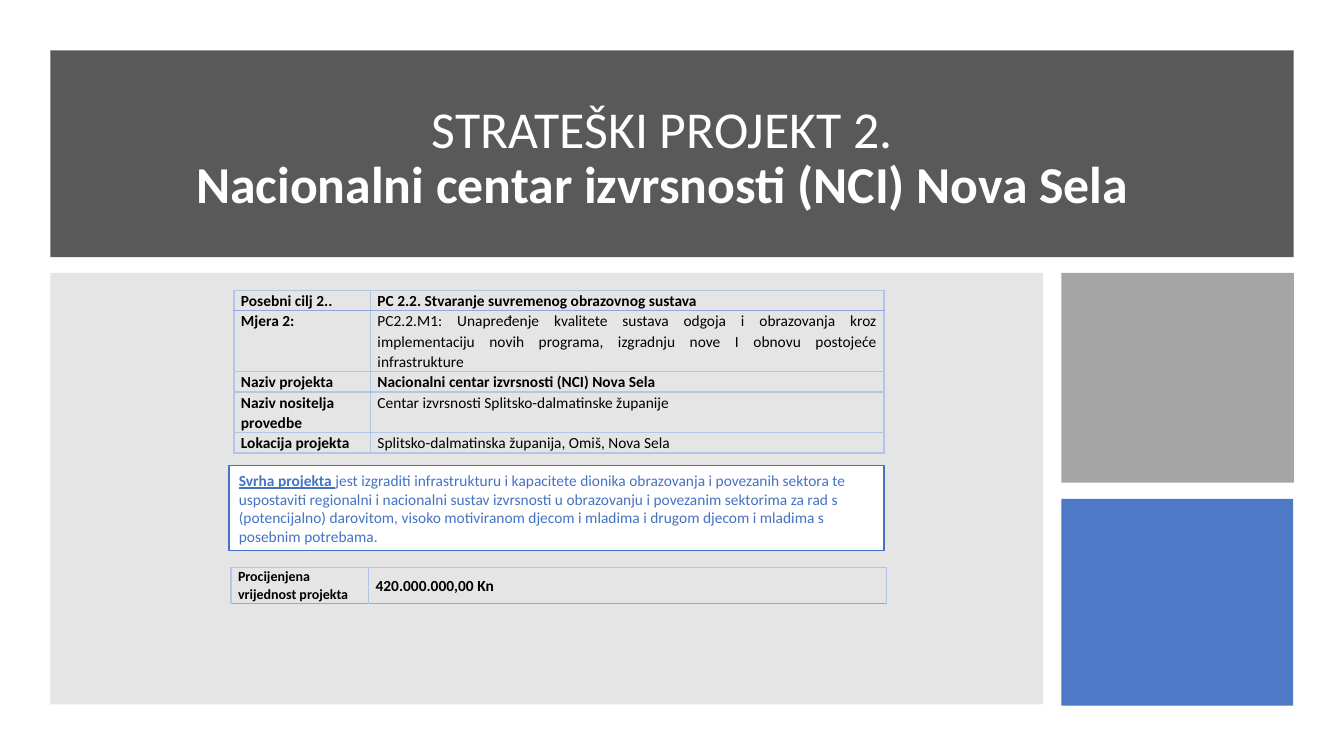
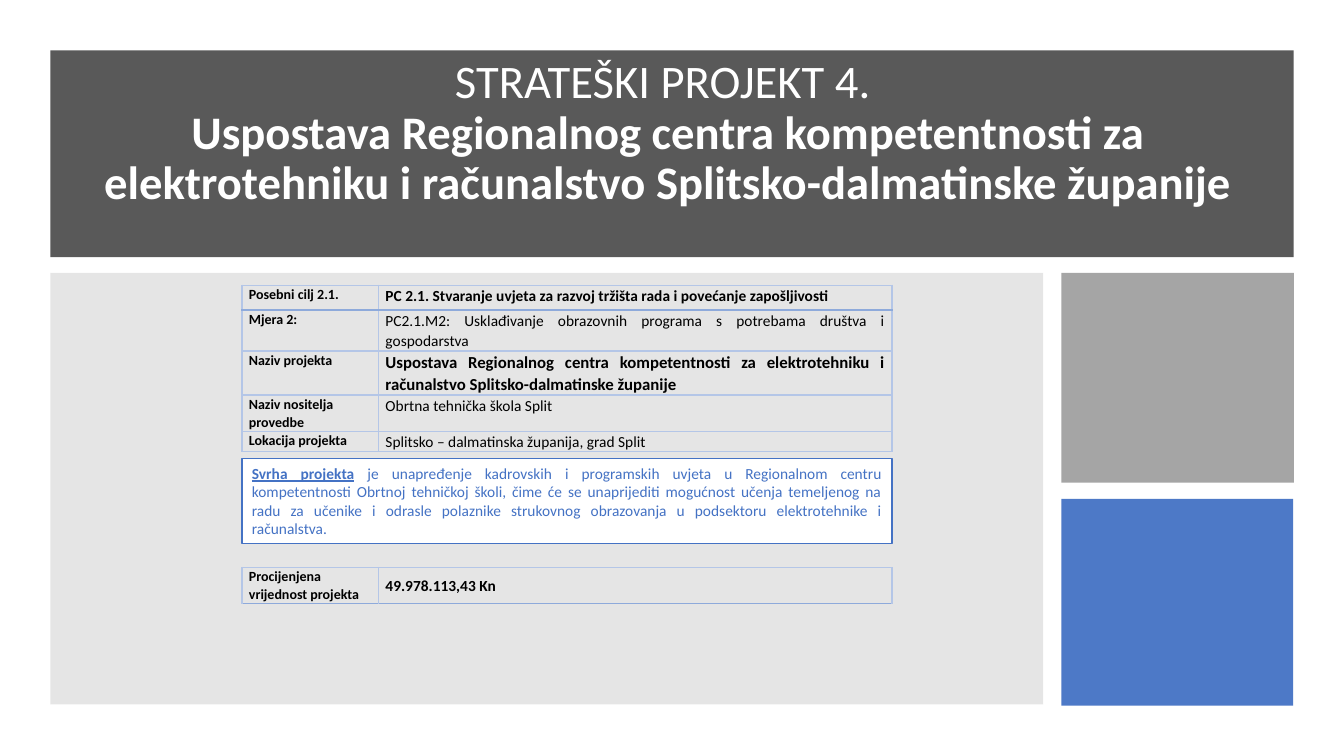
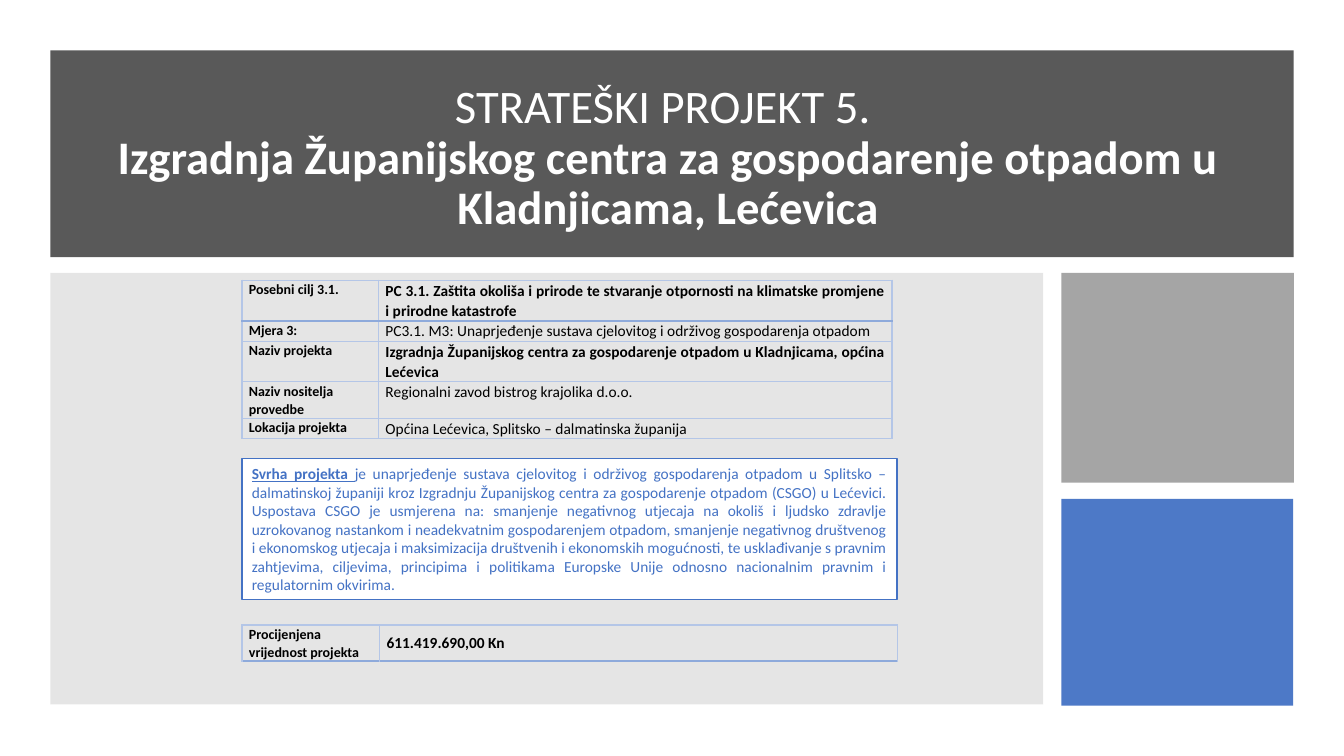
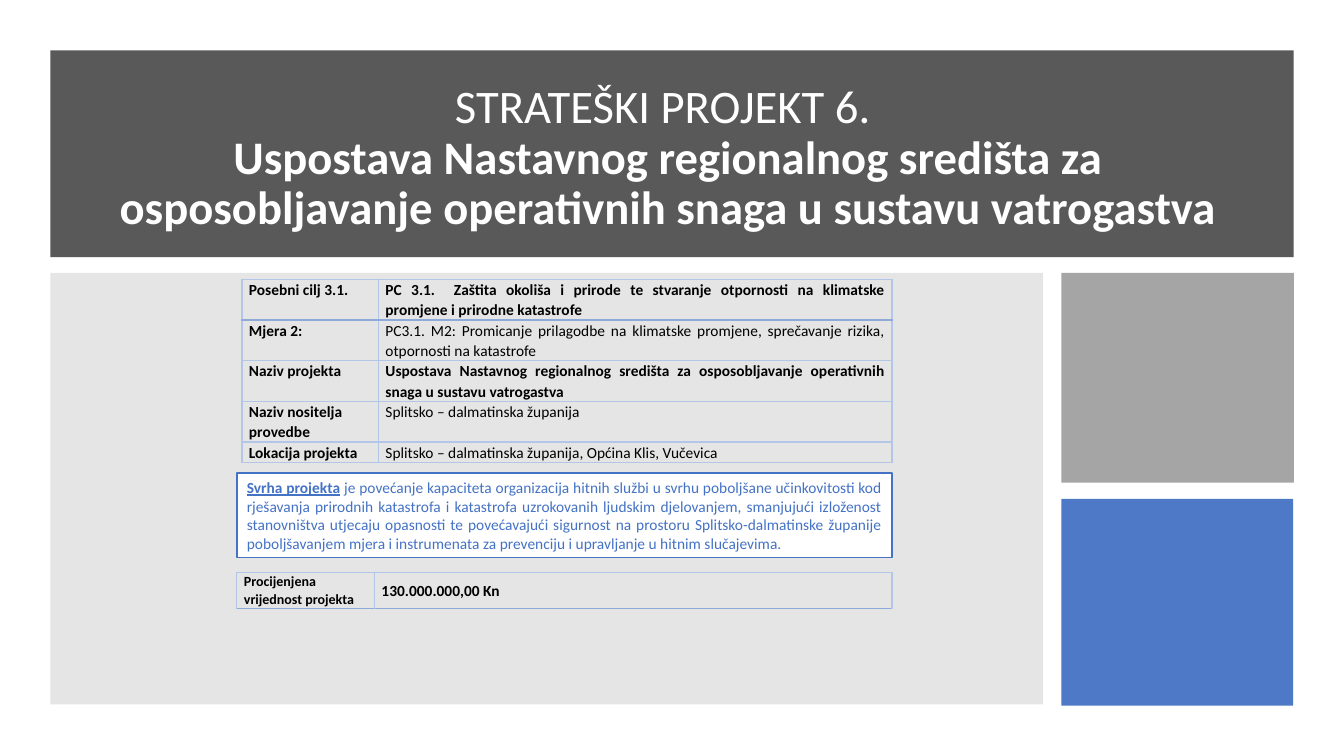
"""Build four slides that each present one strategic project of the county."""
from dataclasses import dataclass
from typing import NamedTuple

from lxml.etree import SubElement
from pptx import Presentation
from pptx.dml.color import RGBColor
from pptx.enum.shapes import MSO_SHAPE
from pptx.enum.text import MSO_ANCHOR, MSO_AUTO_SIZE, PP_ALIGN
from pptx.oxml.ns import qn
from pptx.util import Emu, Inches, Pt

FONT = "Calibri"
WHITE = RGBColor(0xFF, 0xFF, 0xFF)
BLACK = RGBColor(0x00, 0x00, 0x00)
BAND_GRAY = RGBColor(0x59, 0x59, 0x59)
PANEL_GRAY = RGBColor(0x80, 0x80, 0x80)
BLOCK_GRAY = RGBColor(0xA5, 0xA5, 0xA5)
BLUE = RGBColor(0x44, 0x72, 0xC4)
BORDER = RGBColor(0xB4, 0xC6, 0xE7)
BORDER_STRONG = RGBColor(0x8E, 0xAA, 0xDB)

SLIDE_WIDTH = Inches(13.333)
SLIDE_HEIGHT = Inches(7.5)
GRID_COLUMNS, GRID_ROWS = 32, 18
LABEL_SHARE = 0.21
VALUE_HEIGHT = 0.84
LABELS = ("Naziv projekta", "Naziv nositelja provedbe", "Lokacija projekta")
BOLD_ROWS = (0, 2)


class Area(NamedTuple):
    """Left, top, width and height in grid columns and rows."""

    left: float
    top: float
    width: float
    height: float

    def lengths(self) -> tuple[Emu, Emu, Emu, Emu]:
        """Convert the grid units to slide lengths."""
        column, row = SLIDE_WIDTH / GRID_COLUMNS, SLIDE_HEIGHT / GRID_ROWS
        return (Emu(round(self.left * column)), Emu(round(self.top * row)),
                Emu(round(self.width * column)), Emu(round(self.height * row)))


class Block(NamedTuple):
    """A plain rectangle of the shared background."""

    area: Area
    color: RGBColor
    opacity: int = 100


class Style(NamedTuple):
    """The look of one run of text."""

    size: float
    color: RGBColor = BLACK
    bold: bool = False
    underline: bool = False


@dataclass(frozen=True)
class Project:
    """The contents and the layout of one project slide."""

    number: int
    name: str
    goal: tuple[str, str]
    measure: tuple[str, str]
    details: tuple[str, str, str]
    purpose: tuple[str, str]
    cost: str
    facts_area: Area
    purpose_area: Area
    cost_area: Area
    title_size: float = 33.3
    title_lift: float = 0
    label_size: float = 11
    name_size: float = 11
    goal_height: float = 0.15
    purpose_align: PP_ALIGN = PP_ALIGN.JUSTIFY


TITLE_AREA = Area(1.92, 1.92, 27.98, 3.74)
BLOCKS = (
    Block(Area(1.2, 1.2, 29.6, 4.92), BAND_GRAY),
    Block(Area(1.2, 6.5, 23.64, 10.27), PANEL_GRAY, 20),
    Block(Area(25.27, 6.5, 5.54, 4.99), BLOCK_GRAY),
    Block(Area(25.27, 11.88, 5.52, 4.92), BLUE, 95),
)

PROJECTS = (
    Project(
        number=2,
        name="Nacionalni centar izvrsnosti (NCI) Nova Sela ",
        goal=("Posebni cilj 2..", "PC 2.2. Stvaranje suvremenog obrazovnog sustava"),
        measure=("Mjera 2:", "PC2.2.M1: Unapređenje kvalitete sustava odgoja i obrazovanja kroz "
                 "implementaciju novih programa, izgradnju nove I obnovu postojeće infrastrukture"),
        details=("Nacionalni centar izvrsnosti (NCI) Nova Sela ",
                 "Centar izvrsnosti Splitsko-dalmatinske županije",
                 "Splitsko-dalmatinska županija, Omiš, Nova Sela"),
        purpose=("Svrha projekta ",
                 "jest izgraditi infrastrukturu i kapacitete dionika obrazovanja i povezanih "
                 "sektora te uspostaviti regionalni i nacionalni sustav izvrsnosti u obrazovanju i "
                 "povezanim sektorima za rad s (potencijalno) darovitom, visoko motiviranom djecom "
                 "i mladima i drugom djecom i mladima s posebnim potrebama."),
        cost="420.000.000,00 Kn",
        facts_area=Area(5.57, 6.91, 15.48, 3.67),
        purpose_area=Area(5.45, 11.09, 15.6, 2.02),
        cost_area=Area(5.5, 13.51, 15.6, VALUE_HEIGHT),
        title_size=37,
        purpose_align=PP_ALIGN.LEFT,
    ),
    Project(
        number=4,
        name="Uspostava Regionalnog centra kompetentnosti za elektrotehniku i računalstvo "
             "Splitsko-dalmatinske županije",
        goal=("Posebni cilj 2.1.",
              "PC 2.1. Stvaranje uvjeta za razvoj tržišta rada i povećanje zapošljivosti"),
        measure=("Mjera 2:", "PC2.1.M2: Usklađivanje obrazovnih programa s potrebama društva i "
                 "gospodarstva"),
        details=("Uspostava Regionalnog centra kompetentnosti za elektrotehniku i računalstvo "
                 "Splitsko-dalmatinske županije",
                 "Obrtna tehnička škola Split",
                 "Splitsko – dalmatinska županija, grad Split "),
        purpose=("Svrha projekta",
                 " je unapređenje kadrovskih i programskih uvjeta u Regionalnom centru "
                 "kompetentnosti Obrtnoj tehničkoj školi, čime će se unaprijediti mogućnost učenja "
                 "temeljenog na radu za učenike i odrasle polaznike strukovnog obrazovanja u "
                 "podsektoru elektrotehnike i računalstva."),
        cost="49.978.113,43 Kn",
        facts_area=Area(5.76, 6.79, 15.48, 3.82),
        purpose_area=Area(5.76, 10.92, 15.48, 2.02),
        cost_area=Area(5.76, 13.51, 15.48, VALUE_HEIGHT),
        title_lift=0.5,
        label_size=10,
        name_size=12,
        goal_height=0.25,
    ),
    Project(
        number=5,
        name="Izgradnja Županijskog centra za gospodarenje otpadom u Kladnjicama, Lećevica",
        goal=("Posebni cilj 3.1.", "PC 3.1. Zaštita okoliša i prirode te stvaranje otpornosti na "
              "klimatske promjene i prirodne katastrofe"),
        measure=("Mjera 3:",
                 "PC3.1. M3: Unaprjeđenje sustava cjelovitog i održivog gospodarenja otpadom"),
        details=("Izgradnja Županijskog centra za gospodarenje otpadom u Kladnjicama, općina "
                 "Lećevica",
                 "Regionalni zavod bistrog krajolika d.o.o.",
                 "Općina Lećevica, Splitsko – dalmatinska županija"),
        purpose=("Svrha projekta ",
                 "je unaprjeđenje sustava cjelovitog i održivog gospodarenja otpadom u Splitsko – "
                 "dalmatinskoj županiji kroz Izgradnju Županijskog centra za gospodarenje otpadom "
                 "(CSGO) u Lećevici. Uspostava CSGO je usmjerena na: smanjenje negativnog utjecaja "
                 "na okoliš i ljudsko zdravlje uzrokovanog nastankom i neadekvatnim gospodarenjem "
                 "otpadom, smanjenje negativnog društvenog i ekonomskog utjecaja i maksimizacija "
                 "društvenih i ekonomskih mogućnosti, te usklađivanje s pravnim zahtjevima, "
                 "ciljevima, principima i politikama Europske Unije odnosno nacionalnim pravnim i "
                 "regulatornim okvirima."),
        cost="611.419.690,00 Kn",
        facts_area=Area(5.76, 6.67, 15.48, 3.58),
        purpose_area=Area(5.76, 10.92, 15.6, 3.36),
        cost_area=Area(5.76, 14.88, 15.6, VALUE_HEIGHT),
        label_size=10,
    ),
    Project(
        number=6,
        name="Uspostava Nastavnog regionalnog središta za osposobljavanje operativnih snaga u "
             "sustavu vatrogastva",
        goal=("Posebni cilj 3.1.", "PC 3.1.  Zaštita okoliša i prirode te stvaranje otpornosti na "
              "klimatske promjene i prirodne katastrofe"),
        measure=("Mjera 2:", "PC3.1. M2: Promicanje prilagodbe na klimatske promjene, sprečavanje "
                 "rizika, otpornosti na katastrofe"),
        details=("Uspostava Nastavnog regionalnog središta za osposobljavanje operativnih snaga u "
                 "sustavu vatrogastva",
                 "Splitsko – dalmatinska županija",
                 "Splitsko – dalmatinska županija, Općina Klis, Vučevica"),
        purpose=("Svrha projekta",
                 " je povećanje kapaciteta organizacija hitnih službi u svrhu poboljšane "
                 "učinkovitosti kod rješavanja prirodnih katastrofa i katastrofa uzrokovanih "
                 "ljudskim djelovanjem, smanjujući izloženost stanovništva utjecaju opasnosti te "
                 "povećavajući sigurnost na prostoru Splitsko-dalmatinske županije poboljšavanjem "
                 "mjera i instrumenata za prevenciju i upravljanje u hitnim slučajevima. "),
        cost="130.000.000,00 Kn",
        facts_area=Area(5.76, 6.65, 15.48, 4.13),
        purpose_area=Area(5.64, 11.26, 15.6, 2.02),
        cost_area=Area(5.64, 13.63, 15.6, VALUE_HEIGHT),
    ),
)


def add_span(para, text: str, style: Style) -> None:
    """Add one formatted run to a paragraph."""
    span = para.add_run()
    span.text = text
    span.font.name = FONT
    span.font.size = Pt(style.size)
    span.font.bold = style.bold
    span.font.underline = style.underline
    span.font.color.rgb = style.color


def add_block(slide, block: Block):
    """Draw a filled rectangle without outline or shadow."""
    box = slide.shapes.add_shape(MSO_SHAPE.RECTANGLE, *block.area.lengths())
    box.shadow.inherit = False
    box.line.fill.background()
    box.fill.solid()
    box.fill.fore_color.rgb = block.color
    if block.opacity < 100:
        color = box.fill._xPr.find(qn("a:solidFill"))[0]
        SubElement(color, qn("a:alpha"), val=str(block.opacity * 1000))
    return box


def fill_title(slide, project: Project) -> None:
    """Place the two-part title above the band."""
    title = slide.shapes.title
    slide.shapes._spTree.append(title._element)
    title.left, title.top, title.width, title.height = TITLE_AREA.lengths()
    frame = title.text_frame
    frame.word_wrap = True
    frame.auto_size = MSO_AUTO_SIZE.NONE
    frame.vertical_anchor = MSO_ANCHOR.MIDDLE
    frame.margin_bottom = Inches(0.05 + project.title_lift)
    para = frame.paragraphs[0]
    para.alignment = PP_ALIGN.CENTER
    para.line_spacing = 0.9
    add_span(para, f"STRATEŠKI PROJEKT {project.number}. ", Style(project.title_size, WHITE))
    para.add_line_break()
    add_span(para, project.name, Style(project.title_size, WHITE, bold=True))


def add_border(cell, side: str, strong: bool) -> None:
    """Draw one side of a table cell."""
    line = SubElement(cell._tc.get_or_add_tcPr(), qn(f"a:ln{side}"),
                      w=str(Pt(1.5 if strong else 1)))
    fill = SubElement(line, qn("a:solidFill"))
    SubElement(fill, qn("a:srgbClr"), val=str(BORDER_STRONG if strong else BORDER))


def fill_cell(cell, text: str, style: Style, align: PP_ALIGN, row: int) -> None:
    """Write a table cell and draw its borders."""
    cell.margin_left = cell.margin_right = Inches(0.07)
    cell.margin_top = cell.margin_bottom = 0
    for side in "LRTB":
        add_border(cell, side, (side, row) in (("B", 0), ("T", 1)))
    cell.fill.background()
    para = cell.text_frame.paragraphs[0]
    para.alignment = align
    para.line_spacing = 1.07
    para.space_after = Pt(8)
    add_span(para, text, style)


def add_grid_table(slide, area: Area, row_count: int):
    """Add an unstyled table of labels and values."""
    left, top, width, height = area.lengths()
    frame = slide.shapes.add_table(row_count, 2, left, top, width, height)
    table = frame.table
    table.first_row = table.horz_banding = False
    table.columns[0].width = Emu(round(width * LABEL_SHARE))
    table.columns[1].width = width - table.columns[0].width
    for row in table.rows:
        row.height = Inches(0.15)
    frame.height = height
    return table


def add_facts(slide, project: Project) -> None:
    """Add the table of goal, measure and project details."""
    facts = (project.goal, project.measure, *zip(LABELS, project.details))
    table = add_grid_table(slide, project.facts_area, len(facts))
    table.rows[0].height = Inches(project.goal_height)
    for row, (label, value) in enumerate(facts):
        size = project.name_size if row == 2 else 11
        fill_cell(table.cell(row, 0), label, Style(project.label_size, bold=True),
                  PP_ALIGN.LEFT, row)
        fill_cell(table.cell(row, 1), value, Style(size, bold=row in BOLD_ROWS),
                  PP_ALIGN.JUSTIFY, row)


def add_purpose(slide, project: Project) -> None:
    """Add the outlined box that states the purpose."""
    box = add_block(slide, Block(project.purpose_area, WHITE))
    box.line.color.rgb = BLUE
    box.line.width = Pt(1)
    box.text_frame.word_wrap = True
    box.text_frame.auto_size = MSO_AUTO_SIZE.SHAPE_TO_FIT_TEXT
    para = box.text_frame.paragraphs[0]
    para.alignment = project.purpose_align
    lead, statement = project.purpose
    add_span(para, lead, Style(11, BLUE, bold=True, underline=True))
    add_span(para, statement, Style(11, BLUE))


def add_cost(slide, project: Project) -> None:
    """Add the one-row table with the estimated value."""
    table = add_grid_table(slide, project.cost_area, 1)
    fill_cell(table.cell(0, 0), "Procijenjena vrijednost projekta", Style(10, bold=True),
              PP_ALIGN.LEFT, 0)
    fill_cell(table.cell(0, 1), project.cost, Style(11, bold=True), PP_ALIGN.LEFT, 0)
    table.cell(0, 1).vertical_anchor = MSO_ANCHOR.MIDDLE


def main() -> None:
    """Build and save the deck."""
    deck = Presentation()
    deck.slide_width, deck.slide_height = SLIDE_WIDTH, SLIDE_HEIGHT
    for project in PROJECTS:
        page = deck.slides.add_slide(deck.slide_layouts[5])
        for block in BLOCKS:
            add_block(page, block)
        fill_title(page, project)
        add_facts(page, project)
        add_purpose(page, project)
        add_cost(page, project)
    deck.save("out.pptx")


if __name__ == "__main__":
    main()
